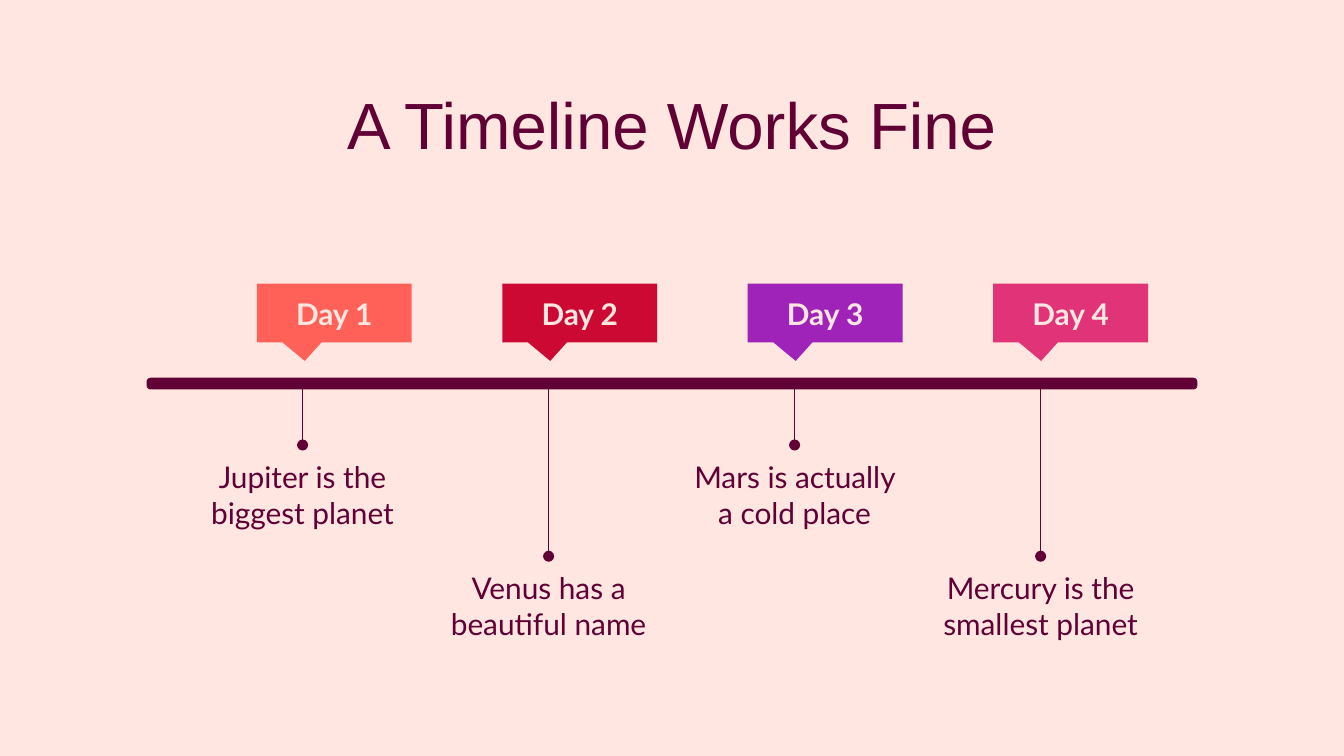
from dataclasses import dataclass

from lxml import etree
from pptx import Presentation
from pptx.dml.color import RGBColor
from pptx.enum import shapes, text
from pptx.oxml.ns import qn
from pptx.util import Pt


@dataclass(frozen=True)
class Theme:
    background: str = "FFE6E0"
    ink: str = "610035"
    flags: tuple = ("FF6159", "CC0933", "9F23B8", "E03378")
    title_font: str = "Arial"
    body_font: str = "Lato"
    title_size: float = 35
    body_size: float = 16
    stem_width: float = 0.75


THEME = Theme()
INSET = 7.2
EVENTS = (
    ("Day 1", "Jupiter is the biggest planet"),
    ("Day 2", "Venus has a beautiful name"),
    ("Day 3", "Mars is actually a cold place"),
    ("Day 4", "Mercury is the smallest planet"),
)


def write(shape, words, *, font=THEME.body_font, size=THEME.body_size,
          color=THEME.ink, bold=False, anchor=text.MSO_ANCHOR.TOP,
          space_after=0, line_spacing=1.0):
    frame = shape.text_frame
    frame.word_wrap = True
    frame.auto_size = text.MSO_AUTO_SIZE.NONE
    frame.vertical_anchor = anchor
    frame.margin_left = frame.margin_right = Pt(INSET)
    frame.margin_top = frame.margin_bottom = Pt(INSET)
    paragraph = frame.paragraphs[0]
    paragraph.text = words
    paragraph.alignment = text.PP_ALIGN.CENTER
    paragraph.space_before = Pt(0)
    paragraph.space_after = Pt(space_after)
    paragraph.line_spacing = line_spacing
    paragraph.font.name = font
    paragraph.font.size = Pt(size)
    paragraph.font.bold = bold
    paragraph.font.color.rgb = RGBColor.from_string(color)


def add_solid(slide, kind, box, color, adjustments):
    """Add a preset shape with a plain fill, no outline and no shadow."""
    shape = slide.shapes.add_shape(kind, *map(Pt, box))
    shape.shadow.inherit = False
    shape.fill.solid()
    shape.fill.fore_color.rgb = RGBColor.from_string(color)
    shape.line.fill.background()
    for index, value in enumerate(adjustments):
        shape.adjustments[index] = value
    return shape


def add_title(slide, box, words):
    title = slide.shapes.title
    title.left, title.top, title.width, title.height = map(Pt, box)
    write(title, words, font=THEME.title_font, size=THEME.title_size,
          line_spacing=1.12)


def add_flag(slide, box, label, color):
    flag = add_solid(slide, shapes.MSO_SHAPE.ROUNDED_RECTANGULAR_CALLOUT,
                     box, color, (-0.19, 0.814, 0))
    write(flag, label, color=THEME.background, bold=True,
          anchor=text.MSO_ANCHOR.MIDDLE)


def add_note(slide, box, words):
    note = slide.shapes.add_textbox(*map(Pt, box))
    write(note, words, space_after=16)
    return note


def add_stem(slide, note, center, top):
    """Run a line from the note's top edge up to the bar, with a dot at the note."""
    stem = slide.shapes.add_connector(
        shapes.MSO_CONNECTOR.STRAIGHT, Pt(center), note.top, Pt(center), Pt(top))
    stem.begin_connect(note, 0)
    stem.line.width = Pt(THEME.stem_width)
    stem.line.color.rgb = RGBColor.from_string(THEME.ink)
    line = stem.line._get_or_add_ln()
    etree.SubElement(line, qn("a:headEnd"), type="oval")
    etree.SubElement(stem._element.spPr, qn("a:effectLst"))


def add_timeline(slide, box, events):
    left, top, width, height = box
    bar_top, bar_height = top + 50.4, 6.3
    note_width, note_height = 126.8, 52
    first_flag, flag_pitch = left + 59.1, 131.5
    first_stem, stem_pitch = left + 83.6, 131.8
    note_tops = (top + 86.4, top + height - note_height)

    add_solid(slide, shapes.MSO_SHAPE.ROUNDED_RECTANGLE,
              (left, bar_top, width, bar_height), THEME.ink, (0.352,))
    for index, ((label, words), color) in enumerate(zip(events, THEME.flags)):
        center = first_stem + index * stem_pitch
        add_flag(slide, (first_flag + index * flag_pitch, top, 83, 31.5),
                 label, color)
        note = add_note(slide, (center - note_width / 2, note_tops[index % 2],
                                note_width, note_height), words)
        add_stem(slide, note, center, bar_top + bar_height - 2)


def main():
    presentation = Presentation()
    presentation.slide_width, presentation.slide_height = Pt(720), Pt(405)
    slide = presentation.slides.add_slide(presentation.slide_layouts[5])
    slide.background.fill.solid()
    slide.background.fill.fore_color.rgb = RGBColor.from_string(THEME.background)
    add_title(slide, (24.5, 33, 671, 45.5), "A Timeline Works Fine")
    add_timeline(slide, (78.5, 152, 563, 198), EVENTS)
    presentation.save("out.pptx")


if __name__ == "__main__":
    main()
